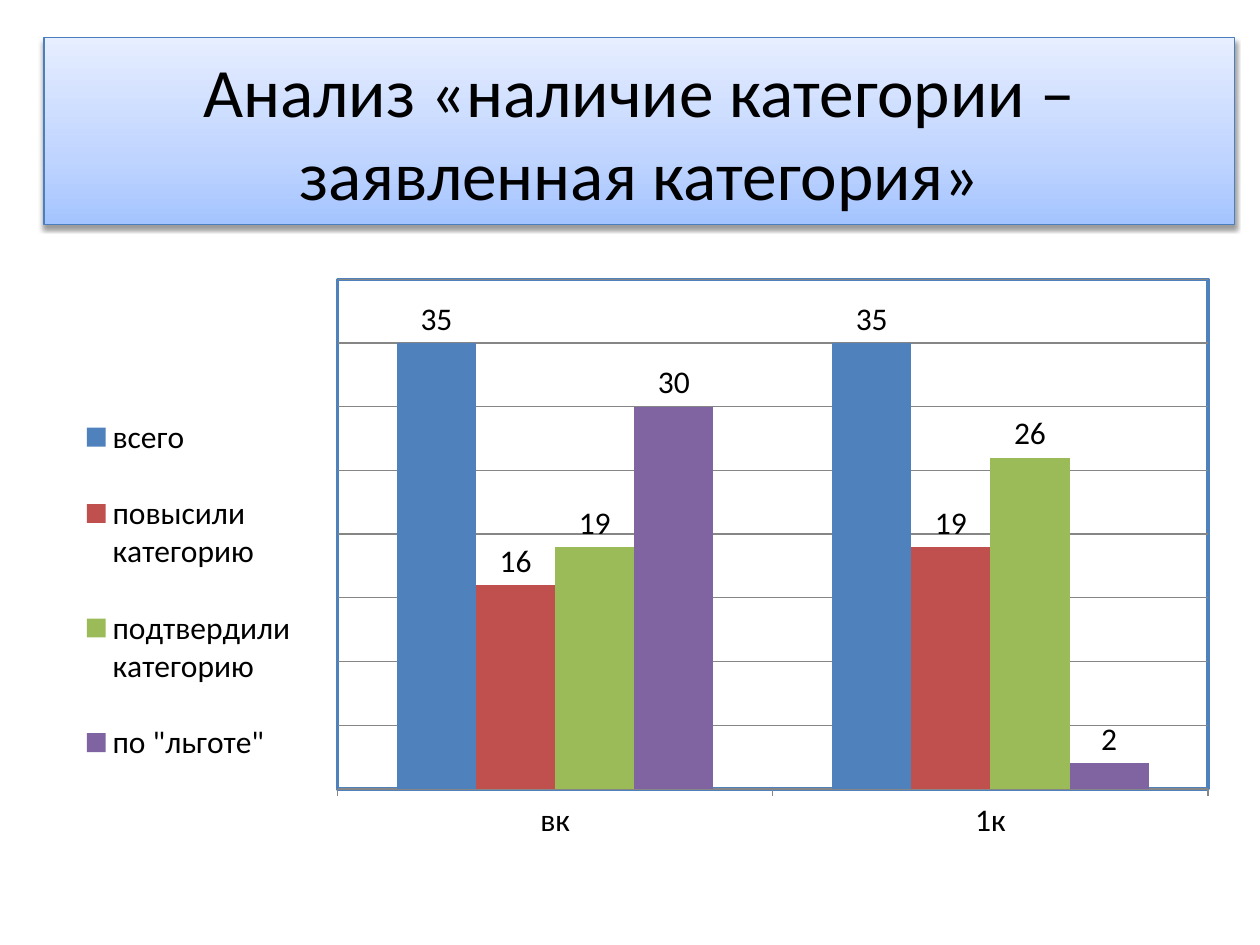
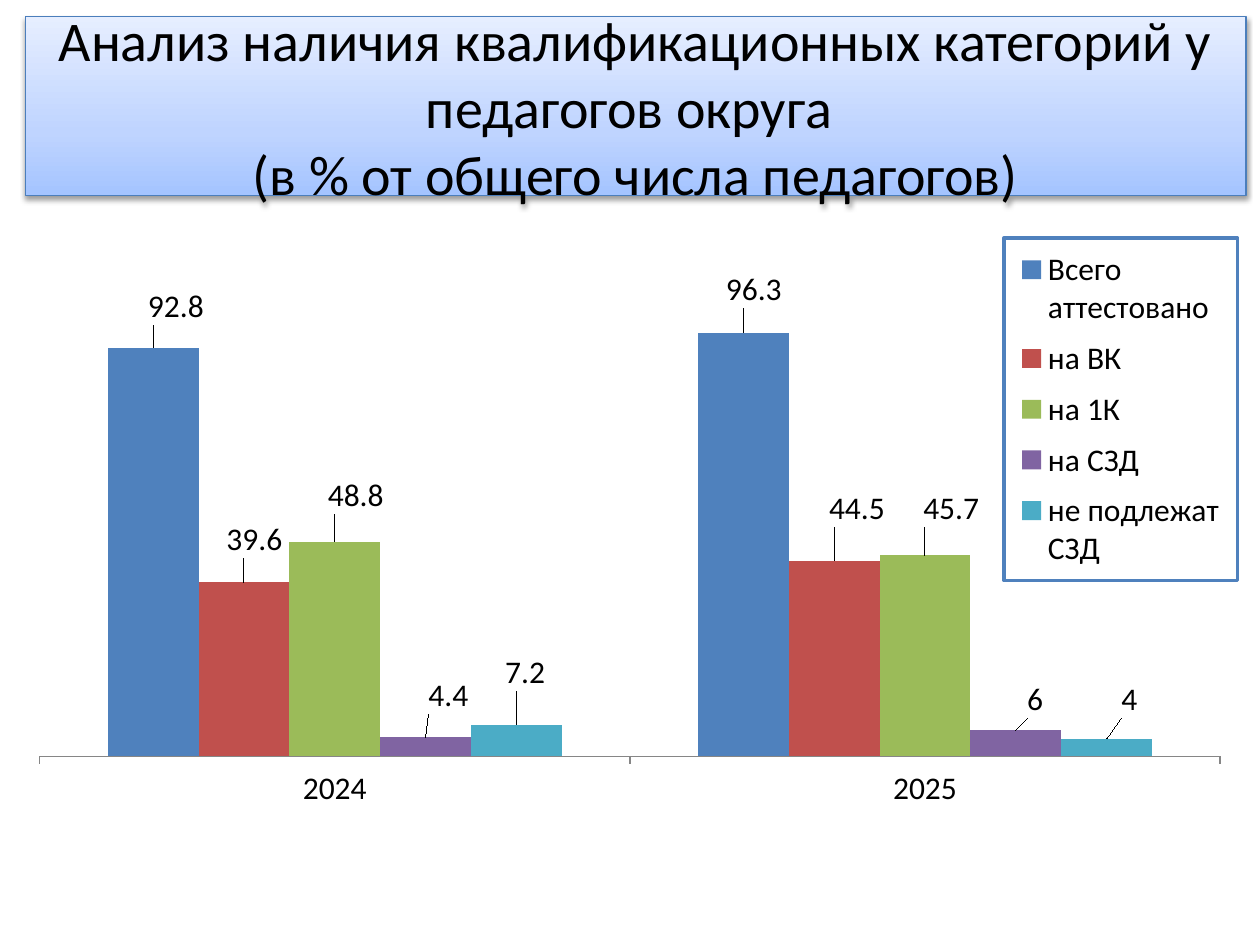
import pptx
import pptx.util
import pptx.oxml
import pptx.oxml.ns
import pptx.chart.data
import pptx.dml.color
import pptx.enum.chart
import pptx.enum.text

Pt = pptx.util.Pt
qn = pptx.oxml.ns.qn
NS = pptx.oxml.ns.nsdecls("a", "c")
FONT = "Calibri"
COLORS = {
    "text": "000000", "paper": "FFFFFF", "axis": "868686", "frame": "4F81BD",
    "title_line": "4B7EBC", "shadow": "000000",
}
SERIES_COLORS = ["4F81BD", "C0504D", "9BBB59", "8064A2", "4BACC6"]
TITLE_STOPS = [(0, "A4C4FF"), (35, "BFD4FF"), (100, "E6EEFF")]

SLIDES = [
    {
        "title": ["Анализ «наличие категории – заявленная категория»"],
        "title_size": 39.6,
        "title_box": (25.2, 21.6, 680.4, 106.56),
        "title_on_top": True,
        "chart_box": (14.4, 20.88, 691.92, 490.32),
        "categories": ["вк", "1к"],
        "series": [
            ("всего", (35, 35)),
            ("повысили категорию", (16, 19)),
            ("подтвердили категорию", (19, 26)),
            ('по "льготе"', (30, 2)),
        ],
        "scale": (40, 5),
        "grid": True,
        "plot_layout": (0.258, 0.283, 0.719, 0.594),
        "legend_position": "RIGHT",
        "legend_layout": (0.04, 0.4, 0.19, 0.49),
        "framed": "plot",
    },
    {
        "title": ["Анализ наличия квалификационных категорий у педагогов округа ",
                  "(в % от общего числа педагогов)"],
        "title_size": 32,
        "title_box": (14.4, 9.36, 697.68, 102.24),
        "title_on_top": False,
        "chart_box": (8.64, 122.4, 702.72, 402.48),
        "categories": ["2024", "2025"],
        "series": [
            ("Всего аттестовано", (92.8, 96.3)),
            ("на ВК", (39.6, 44.5)),
            ("на 1К", (48.8, 45.7)),
            ("на СЗД", (4.4, 6)),
            ("не подлежат СЗД", (7.2, 4)),
        ],
        "scale": (120, 20),
        "grid": False,
        "plot_layout": (0.02, 0.02, 0.96, 0.75),
        "legend_position": "BOTTOM",
        "legend_layout": (0.804, 0.034, 0.19, 0.486),
        "framed": "legend",
        "label_shifts": [
            [(13, -10), (6, -11)],
            [(6, -11), (13, -16)],
            [(12, -13), (15, -13)],
            [(13, -10), (11, -4)],
            [(5, -16), (13, -9)],
        ],
    },
]


def rgb(name):
    return pptx.dml.color.RGBColor.from_string(COLORS.get(name, name))


def add_xml(parent, xml):
    parent.append(pptx.oxml.parse_xml(xml))


def set_layout(parent, index, tags):
    for old in parent.findall(qn("c:layout")):
        parent.remove(old)
    items = "".join(f'<c:{tag} val="{value}"/>' for tag, value in tags)
    parent.insert(index, pptx.oxml.parse_xml(
        f"<c:layout {NS}><c:manualLayout>{items}</c:manualLayout></c:layout>"))


def edge_layout(box):
    return [("xMode", "edge"), ("yMode", "edge"), *zip("xywh", box)]


def add_frame(parent):
    add_xml(parent, f'<c:spPr {NS}><a:solidFill><a:srgbClr val="{COLORS["paper"]}"/></a:solidFill>'
                    f'<a:ln w="25400"><a:solidFill><a:srgbClr val="{COLORS["frame"]}"/>'
                    "</a:solidFill></a:ln></c:spPr>")


def style_title(sp, data):
    sp.left, sp.top, sp.width, sp.height = map(Pt, data["title_box"])
    stops = "".join(f'<a:gs pos="{pos * 1000}"><a:srgbClr val="{color}"/></a:gs>'
                    for pos, color in TITLE_STOPS)
    spPr = sp._element.spPr
    add_xml(spPr, f'<a:gradFill {NS} rotWithShape="1"><a:gsLst>{stops}</a:gsLst>'
                  '<a:lin ang="16200000" scaled="0"/></a:gradFill>')
    sp.line.color.rgb = rgb("title_line")
    sp.line.width = Pt(0.75)
    add_xml(spPr, f'<a:effectLst {NS}><a:outerShdw blurRad="40000" dist="20000" dir="5400000" '
                  f'rotWithShape="0"><a:srgbClr val="{COLORS["shadow"]}"><a:alpha val="38000"/>'
                  "</a:srgbClr></a:outerShdw></a:effectLst>")
    tf = sp.text_frame
    tf.word_wrap = True
    tf.auto_size = pptx.enum.text.MSO_AUTO_SIZE.NONE
    tf.vertical_anchor = pptx.enum.text.MSO_ANCHOR.MIDDLE
    p = tf.paragraphs[0]
    p.alignment = pptx.enum.text.PP_ALIGN.CENTER
    for i, line in enumerate(data["title"]):
        if i:
            p.add_line_break()
        r = p.add_run()
        r.text = line
        r.font.name = FONT
        r.font.size = Pt(data["title_size"])
        r.font.color.rgb = rgb("text")


def shift_labels(series, shifts, width, height):
    for i, (dx, dy) in enumerate(shifts):
        label = series.points[i].data_label
        label.position = pptx.enum.chart.XL_LABEL_POSITION.OUTSIDE_END
    for dLbl, (dx, dy) in zip(series._element.iter(qn("c:dLbl")), shifts):
        set_layout(dLbl, 1, [("x", round(dx / width, 4)), ("y", round(dy / height, 4))])


def add_column_chart(s, data):
    chart_data = pptx.chart.data.CategoryChartData()
    chart_data.categories = data["categories"]
    for name, values in data["series"]:
        chart_data.add_series(name, values)
    chart = s.shapes.add_chart(pptx.enum.chart.XL_CHART_TYPE.COLUMN_CLUSTERED,
                               *map(Pt, data["chart_box"]), chart_data).chart
    chart.has_title = False
    chart.font.name = FONT
    chart.font.size = Pt(18)
    chart.font.color.rgb = rgb("text")

    plot = chart.plots[0]
    plot.gap_width = 150
    plot.overlap = 0
    plot.vary_by_categories = False
    shifts = data.get("label_shifts", [[]] * len(data["series"]))
    for series, color, series_shifts in zip(plot.series, SERIES_COLORS, shifts):
        series.format.fill.solid()
        series.format.fill.fore_color.rgb = rgb(color)
        labels = series.data_labels
        labels.show_value = True
        labels.position = pptx.enum.chart.XL_LABEL_POSITION.OUTSIDE_END
        shift_labels(series, series_shifts, *data["chart_box"][2:])

    axis = chart.value_axis
    axis.minimum_scale = 0
    axis.maximum_scale, axis.major_unit = data["scale"]
    axis.has_major_gridlines = data["grid"]
    lines = [chart.category_axis.format.line]
    if data["grid"]:
        lines.append(axis.major_gridlines.format.line)
    axis.visible = False
    for line in lines:
        line.color.rgb = rgb("axis")
        line.width = Pt(0.75)
    chart.category_axis.major_tick_mark = pptx.enum.chart.XL_TICK_MARK.OUTSIDE

    chart.has_legend = True
    legend = chart.legend
    legend.position = pptx.enum.chart.XL_LEGEND_POSITION[data["legend_position"]]
    legend.include_in_layout = False
    parts = {"plot": chart._chartSpace.chart.plotArea, "legend": legend._element}
    set_layout(parts["plot"], 0, [("layoutTarget", "inner"), *edge_layout(data["plot_layout"])])
    set_layout(parts["legend"], 1, edge_layout(data["legend_layout"]))
    add_frame(parts[data["framed"]])


def main():
    prs = pptx.Presentation()
    prs.slide_width, prs.slide_height = Pt(720), Pt(540)
    for data in SLIDES:
        s = prs.slides.add_slide(prs.slide_layouts[5])
        title = s.shapes.title
        style_title(title, data)
        add_column_chart(s, data)
        if data["title_on_top"]:
            title._element.getparent().append(title._element)
    prs.save("out.pptx")


if __name__ == "__main__":
    main()
